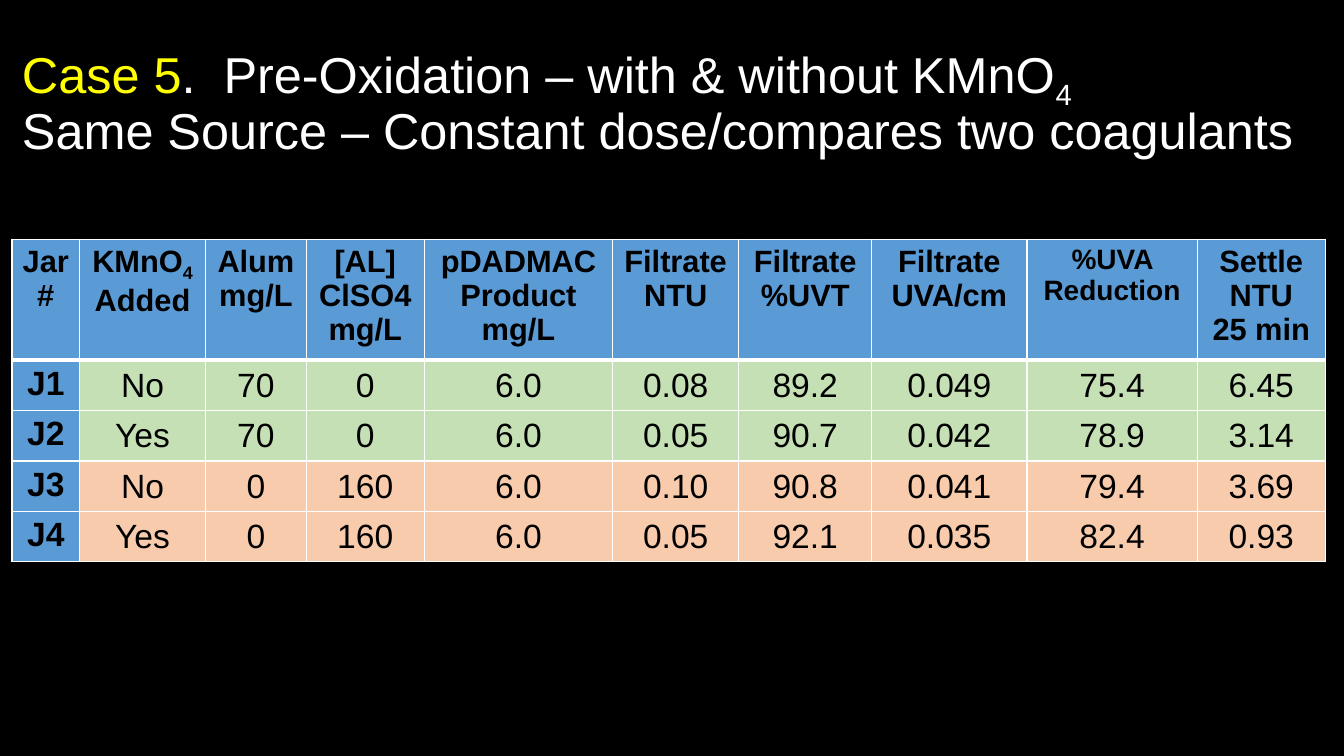
from dataclasses import dataclass

from pptx import Presentation
from pptx.dml.color import RGBColor
from pptx.enum.text import MSO_ANCHOR, PP_ALIGN
from pptx.oxml import parse_xml
from pptx.oxml.ns import nsdecls
from pptx.util import Pt

CENTER, LEFT = PP_ALIGN.CENTER, PP_ALIGN.LEFT
TOP, MIDDLE = MSO_ANCHOR.TOP, MSO_ANCHOR.MIDDLE


@dataclass(frozen=True)
class Theme:
    """Font, colours and type sizes of the slide."""
    font: str = "Arial"
    black: str = "000000"
    white: str = "FFFFFF"
    yellow: str = "FFFF00"
    blue: str = "5B9BD5"
    green: str = "C5E0B4"
    peach: str = "F8CBAD"
    title: int = 36
    body: int = 24
    header: int = 22
    header_small: int = 20


THEME = Theme()
TITLE = [
    [("Case 5", THEME.yellow),
     (".  Pre-Oxidation – with & without KMnO_4", THEME.white)],
    [("Same Source – Constant dose/compares two coagulants", THEME.white)],
]
COLUMNS = [
    ("Jar\n#", 0.67), ("KMnO_4\nAdded", 1.25), ("Alum\nmg/L", 1),
    ("[AL]\nClSO4\nmg/L", 1.17), ("pDADMAC\nProduct\nmg/L", 1.87),
    ("Filtrate\nNTU", 1.25), ("Filtrate\n%UVT", 1.32),
    ("Filtrate\nUVA/cm", 1.54), ("%UVA Reduction", 1.69),
    ("Settle\nNTU\n25 min", 1.27),
]
JARS = [
    ("J1", "No", "70", "0", "6.0", "0.08", "89.2", "0.049", "75.4", "6.45"),
    ("J2", "Yes", "70", "0", "6.0", "0.05", "90.7", "0.042", "78.9", "3.14"),
    ("J3", "No", "0", "160", "6.0", "0.10", "90.8", "0.041", "79.4", "3.69"),
    ("J4", "Yes", "0", "160", "6.0", "0.05", "92.1", "0.035", "82.4", "0.93"),
]
HEADER_HEIGHT, ROW_HEIGHT = 80.8, 34


def set_attributes(target, values):
    """Set every attribute in a dict of format values."""
    for name, value in values.items():
        setattr(target, name, value)


def add_runs(p, text, size, color, bold=False):
    """Add text to a paragraph; the part after an underscore is subscript."""
    for i, part in enumerate(text.split("_")):
        r = p.add_run()
        r.text = part
        set_attributes(r.font, {"name": THEME.font, "size": Pt(size), "bold": bold})
        r.font.color.rgb = RGBColor.from_string(color)
        if i:
            r._r.get_or_add_rPr().set("baseline", "-25000")


def next_paragraph(tf, index):
    """Return the first paragraph of a frame, or a new one after it."""
    return tf.add_paragraph() if index else tf.paragraphs[0]


def add_title(s):
    """Add the two-line title."""
    tf = s.shapes.add_textbox(Pt(8.6), Pt(25.2), Pt(938), Pt(126)).text_frame
    set_attributes(tf, {"word_wrap": True, "vertical_anchor": TOP,
                        "margin_top": Pt(6)})
    for i, line in enumerate(TITLE):
        p = next_paragraph(tf, i)
        set_attributes(p, {"alignment": LEFT, "line_spacing": 0.9})
        for text, color in line:
            add_runs(p, text, THEME.title, color)


def add_borders(cell, top=1, bottom=1):
    """Draw white lines on the four sides of a cell."""
    tc_pr = cell._tc.get_or_add_tcPr()
    for side, width in {"L": 1, "R": 1, "T": top, "B": bottom}.items():
        tc_pr.append(parse_xml(
            f'<a:ln{side} {nsdecls("a")} w="{Pt(width)}"><a:solidFill>'
            f'<a:srgbClr val="{THEME.white}"/></a:solidFill></a:ln{side}>'))


def fill_cell(cell, text, size, fill, bold=False, **borders):
    """Write centred text in a cell and give it borders and a fill."""
    add_borders(cell, **borders)
    cell.fill.solid()
    cell.fill.fore_color.rgb = RGBColor.from_string(fill)
    for i, line in enumerate(text.split("\n")):
        p = next_paragraph(cell.text_frame, i)
        p.alignment = CENTER
        add_runs(p, line, size, THEME.black, bold)


def add_jar_table(s):
    """Add the table of jar test results."""
    frame = s.shapes.add_table(
        len(JARS) + 1, len(COLUMNS), Pt(8.6), Pt(170.8), Pt(938),
        Pt(HEADER_HEIGHT + ROW_HEIGHT * len(JARS)))
    table = frame.table
    table.horz_banding = False
    table.rows[0].height = Pt(HEADER_HEIGHT)
    for col, (heading, inches) in enumerate(COLUMNS):
        table.columns[col].width = Pt(inches * 72)
        size = THEME.header_small if heading.startswith("%") else THEME.header
        fill_cell(table.cell(0, col), heading, size, THEME.blue, True, bottom=3)
    for row, jar in enumerate(JARS, 1):
        table.rows[row].height = Pt(ROW_HEIGHT)
        top = 3 if row == 1 else 1
        row_fill = THEME.green if row <= 2 else THEME.peach
        for col, value in enumerate(jar):
            cell = table.cell(row, col)
            is_label = col == 0
            fill = THEME.blue if is_label else row_fill
            fill_cell(cell, value, THEME.body, fill, is_label, top=top)
            if not is_label:
                set_attributes(cell, {
                    "vertical_anchor": MIDDLE, "margin_left": Pt(0.7),
                    "margin_right": Pt(0.7), "margin_top": Pt(0.7),
                    "margin_bottom": 0})


def main():
    """Build the slide and save it."""
    prs = Presentation()
    set_attributes(prs, {"slide_width": Pt(960), "slide_height": Pt(540)})
    s = prs.slides.add_slide(prs.slide_layouts[6])
    s.background.fill.solid()
    s.background.fill.fore_color.rgb = RGBColor.from_string(THEME.black)
    add_title(s)
    add_jar_table(s)
    prs.save("out.pptx")


if __name__ == "__main__":
    main()
